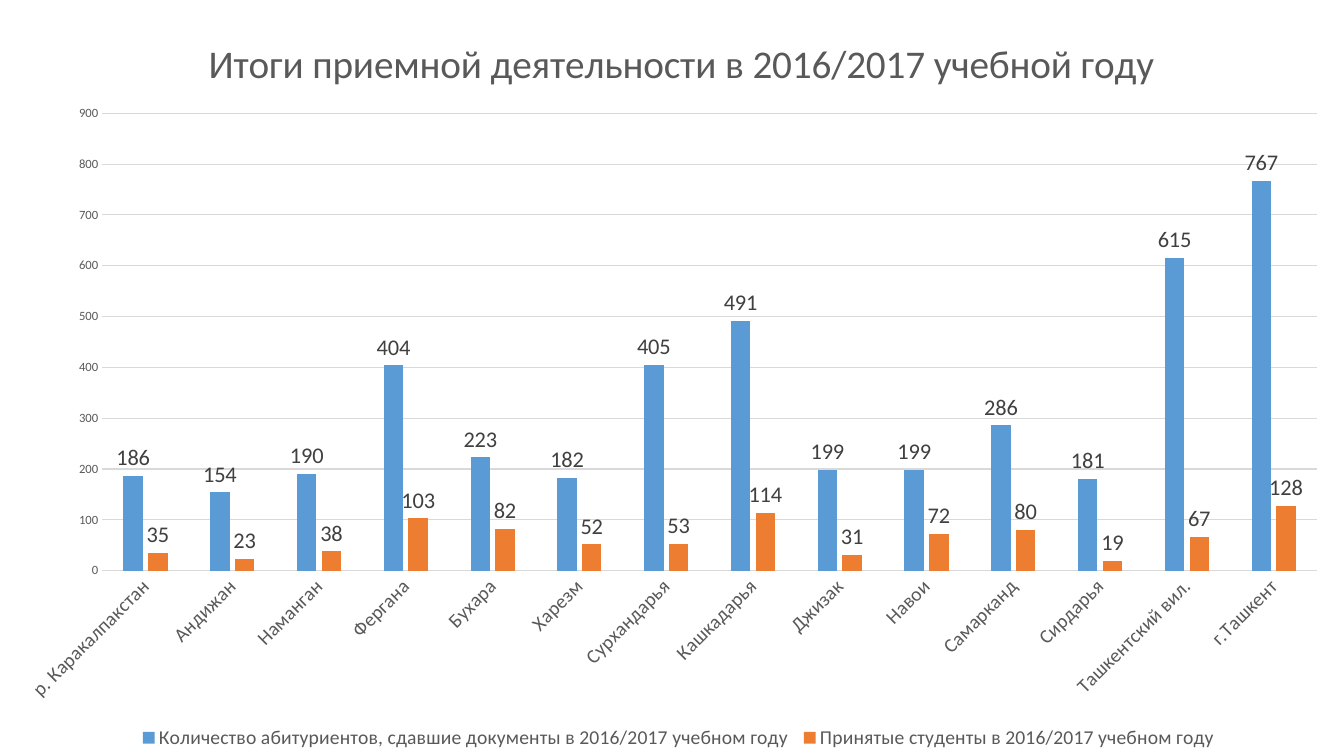
from lxml import etree
from pptx import Presentation
from pptx import util as u
from pptx.chart.data import CategoryChartData
from pptx.dml.color import RGBColor
from pptx.enum import chart as ch
from pptx.oxml.ns import qn

COLOURS = {"applicants": "5B9BD5", "admitted": "ED7D31", "text": "595959",
           "labels": "404040", "lines": "D9D9D9"}
WIDTH, HEIGHT = 960, 540

REGIONS = ["р. Каракалпакстан", "Андижан", "Наманган", "Фергана", "Бухара",
           "Харезм", "Сурхандарья", "Кашкадарья", "Джизак", "Навои",
           "Самарканд", "Сирдарья", "Ташкентский вил.", "г.Ташкент"]
SERIES = {
    "applicants": ("Количество абитуриентов, сдавшие документы в 2016/2017 учебном году",
                   [186, 154, 190, 404, 223, 182, 405, 491, 199, 199, 286, 181, 615, 767]),
    "admitted": ("Принятые студенты в 2016/2017 учебном году",
                 [35, 23, 38, 103, 82, 52, 53, 114, 31, 72, 80, 19, 67, 128]),
}


def style_font(font, size, colour="text"):
    for name, value in {"name": "Calibri", "size": u.Pt(size), "bold": False}.items():
        setattr(font, name, value)
    font.color.rgb = RGBColor.from_string(COLOURS[colour])


def place(element, index, **settings):
    """Give a chart part a manual layout, inserted as its child at index."""
    for old_layout in element.findall(qn("c:layout")):
        element.remove(old_layout)
    layout = etree.Element(qn("c:layout"))
    manual = etree.SubElement(layout, qn("c:manualLayout"))
    for tag, value in settings.items():
        etree.SubElement(manual, qn("c:" + tag)).set("val", str(value))
    element.insert(index, layout)


presentation = Presentation()
presentation.slide_width, presentation.slide_height = u.Pt(WIDTH), u.Pt(HEIGHT)
slide = presentation.slides.add_slide(presentation.slide_layouts[6])

# Chart
data = CategoryChartData()
data.categories = REGIONS
for name, values in SERIES.values():
    data.add_series(name, values)
chart = slide.shapes.add_chart(ch.XL_CHART_TYPE.COLUMN_CLUSTERED, 0, 0,
                               u.Pt(WIDTH), u.Pt(HEIGHT), data).chart
style_font(chart.font, 10)

# Title and legend
title = chart.chart_title
title.text_frame.text = "Итоги приемной деятельности в 2016/2017 учебной году"
style_font(title.text_frame.paragraphs[0].runs[0].font, 28)
title.include_in_layout = False
chart.has_legend = True
legend = chart.legend
legend.position = ch.XL_LEGEND_POSITION.BOTTOM
legend.include_in_layout = False
style_font(legend.font, 14)

# Columns
plot = chart.plots[0]
for name, value in {"gap_width": 219, "overlap": -27, "vary_by_categories": False}.items():
    setattr(plot, name, value)
for series, key in zip(plot.series, SERIES):
    series.format.fill.solid()
    series.format.fill.fore_color.rgb = RGBColor.from_string(COLOURS[key])
    series.invert_if_negative = False
    labels = series.data_labels
    labels.show_value = True
    labels.position = ch.XL_LABEL_POSITION.OUTSIDE_END
    style_font(labels.font, 16, "labels")

# Axes
regions, counts = chart.category_axis, chart.value_axis
for axis, size in ((regions, 14), (counts, 9)):
    axis.major_tick_mark = axis.minor_tick_mark = ch.XL_TICK_MARK.NONE
    style_font(axis.tick_labels.font, size)
regions._element.find(qn("c:txPr")).find(qn("a:bodyPr")).set("rot", "-2700000")
counts.minimum_scale, counts.maximum_scale, counts.major_unit = 0, 900, 100
counts.format.line.fill.background()
for line in (regions.format.line, counts.major_gridlines.format.line):
    line.color.rgb = RGBColor.from_string(COLOURS["lines"])
    line.width = u.Pt(0.75)

# Positions as fractions of the chart
place(title._element, 1, xMode="edge", yMode="edge", x=0.15, y=0.04)
place(legend._element, 1, xMode="edge", yMode="edge", x=0.1, y=0.96, w=0.81, h=0.04)
place(chart._chartSpace.chart.plotArea, 0, layoutTarget="inner", xMode="edge",
      yMode="edge", x=0.076, y=0.15, w=0.904, h=0.605)

presentation.save("out.pptx")
